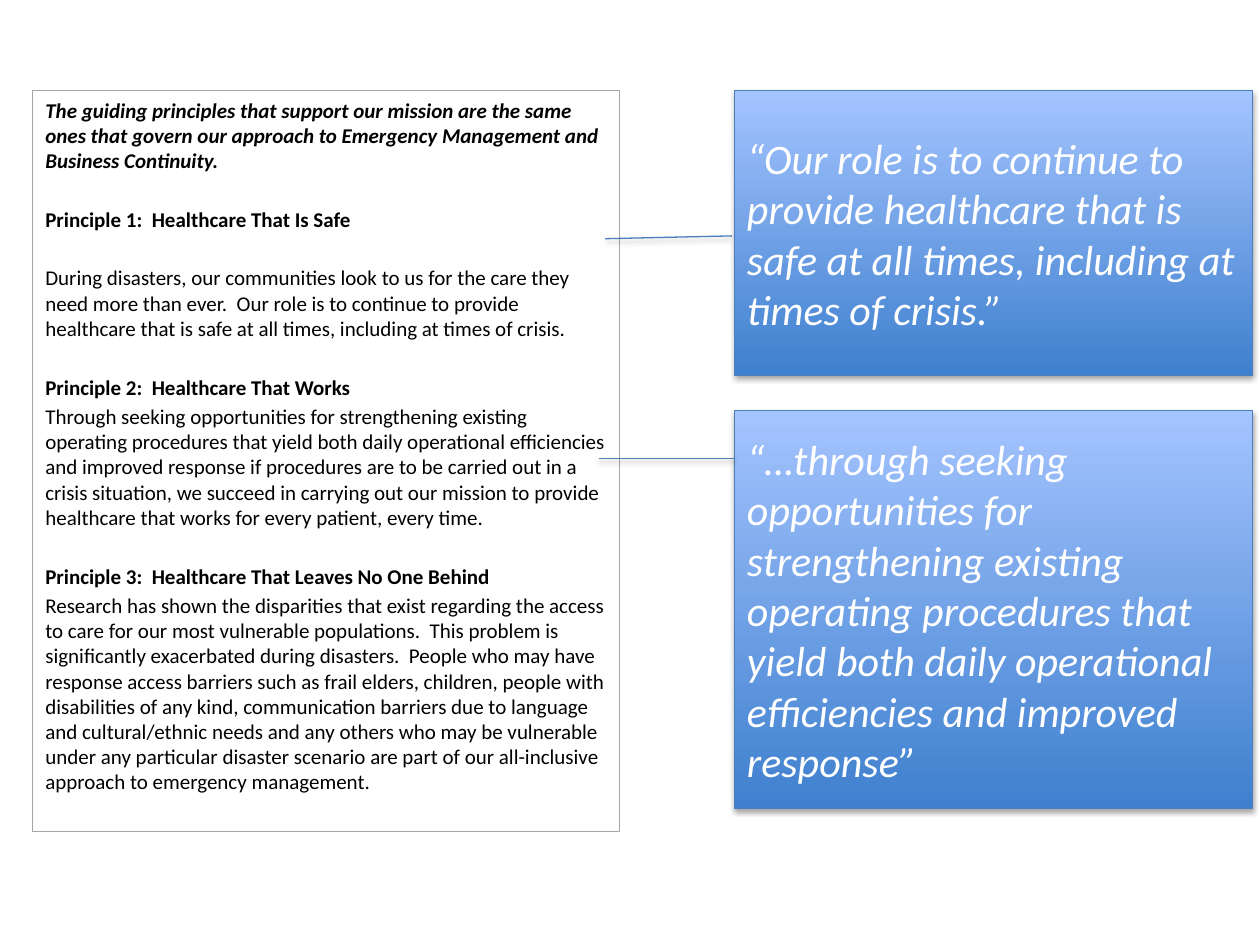
from dataclasses import dataclass

from lxml import etree
from pptx import Presentation
from pptx.dml.color import RGBColor
from pptx.enum.shapes import MSO_CONNECTOR, MSO_SHAPE
from pptx.enum.text import MSO_ANCHOR, MSO_AUTO_SIZE, PP_ALIGN
from pptx.oxml import parse_xml
from pptx.oxml.ns import nsdecls, qn
from pptx.util import Inches, Pt

RECT = MSO_SHAPE.RECTANGLE
CALLOUT = MSO_SHAPE.LINE_CALLOUT_1
STRAIGHT = MSO_CONNECTOR.STRAIGHT
MIDDLE, TOP = MSO_ANCHOR.MIDDLE, MSO_ANCHOR.TOP
LEFT = PP_ALIGN.LEFT
NO_AUTOFIT = MSO_AUTO_SIZE.NONE


@dataclass(frozen=True)
class Theme:
    font: str = "Calibri"
    body_size: float = 12
    quote_size: float = 24
    line_width: float = 0.75
    para_gap: float = 2.4
    section_gap: float = 19.2
    text: str = "000000"
    quote_text: str = "FFFFFF"
    body_line: str = "A6A6A6"
    quote_line: str = "4B7EBC"
    connector: str = "4F81BD"
    grad_bottom: str = "3F80CE"
    grad_top: str = "A4C4FF"


THEME = Theme()

INTRO = ("The guiding principles that support our mission are the same ones that govern "
         "our approach to Emergency Management and Business Continuity.")
# heading, text, gap between them
PRINCIPLES = [
    ("Principle 1:  Healthcare That Is Safe",
     "During disasters, our communities look to us for the care they need more than ever.  "
     "Our role is to continue to provide healthcare that is safe at all times, including at "
     "times of crisis.", THEME.section_gap),
    ("Principle 2:  Healthcare That Works",
     "Through seeking opportunities for strengthening existing operating procedures that "
     "yield both daily operational efficiencies and improved response if procedures are to "
     "be carried out in a crisis situation, we succeed in carrying out our mission to "
     "provide healthcare that works for every patient, every time.", THEME.para_gap),
    ("Principle 3:  Healthcare That Leaves No One Behind",
     "Research has shown the disparities that exist regarding the access to care for our "
     "most vulnerable populations.  This problem is significantly exacerbated during "
     "disasters.  People who may have response access barriers such as frail elders, "
     "children, people with disabilities of any kind, communication barriers due to language "
     "and cultural/ethnic needs and any others who may be vulnerable under any particular "
     "disaster scenario are part of our all-inclusive approach to emergency management.",
     THEME.para_gap),
]
QUOTE_SAFE = ("“Our role is to continue to provide healthcare that is safe at all times, "
              "including at times of crisis.”")
QUOTE_WORKS = ("“…through seeking opportunities for strengthening existing operating "
               "procedures that yield both daily operational efficiencies and improved "
               "response”")


def rgb(value):
    return RGBColor.from_string(value)


def set_line(sp, color):
    sp.line.color.rgb = rgb(color)
    sp.line.width = Pt(THEME.line_width)


def set_shadow(sp, alpha, dist):
    """Replace the inherited shadow with a soft one falling straight down."""
    sp_pr = sp._element.spPr
    for old in sp_pr.findall(qn("a:effectLst")):
        sp_pr.remove(old)
    sp_pr.append(parse_xml(
        f'<a:effectLst {nsdecls("a")}><a:outerShdw blurRad="{Pt(3.1)}" dist="{Pt(dist)}" '
        f'dir="5400000" rotWithShape="0"><a:srgbClr val="000000">'
        f'<a:alpha val="{alpha * 1000}"/></a:srgbClr></a:outerShdw></a:effectLst>'))


def add_run(p, text, size, color, bold=False, italic=False):
    r = p.add_run()
    r.text = text
    r.font.name = THEME.font
    r.font.size = Pt(size)
    r.font.color.rgb = rgb(color)
    r.font.bold = bold
    r.font.italic = italic


def add_body_paragraph(tf, text, gap, **style):
    p = tf.add_paragraph() if tf.paragraphs[0].runs else tf.paragraphs[0]
    p.space_before = Pt(gap)
    p_pr = p._p.get_or_add_pPr()
    p_pr.set("marL", "0")
    p_pr.set("indent", "0")
    etree.SubElement(p_pr, qn("a:buNone"))
    add_run(p, text, THEME.body_size, THEME.text, **style)


def fill_principles(sp):
    sp.left, sp.top, sp.width, sp.height = map(Inches, (0.26, 0.72, 4.66, 5.88))
    set_line(sp, THEME.body_line)
    tf = sp.text_frame
    tf.word_wrap = True
    tf.auto_size = NO_AUTOFIT
    tf.vertical_anchor = TOP
    add_body_paragraph(tf, INTRO, 0, bold=True, italic=True)
    for heading, text, gap in PRINCIPLES:
        add_body_paragraph(tf, heading, THEME.section_gap, bold=True)
        add_body_paragraph(tf, text, gap)


def add_quote(slide, kind, top, height, text):
    sp = slide.shapes.add_shape(kind, Inches(5.83), Inches(top), Inches(4.11), Inches(height))
    sp.fill.gradient()
    sp.fill.gradient_angle = 90
    for stop, color in zip(sp.fill.gradient_stops, (THEME.grad_bottom, THEME.grad_top)):
        stop.color.rgb = rgb(color)
    for stop, position in zip(sp.fill.gradient_stops, (0, 1)):
        stop.position = position
    set_line(sp, THEME.quote_line)
    set_shadow(sp, alpha=35, dist=1.8)
    tf = sp.text_frame
    tf.word_wrap = True
    tf.vertical_anchor = MIDDLE
    p = tf.paragraphs[0]
    p.alignment = LEFT
    add_run(p, text, THEME.quote_size, THEME.quote_text, italic=True)
    return sp


def add_link(slide, x1, x2, y):
    line = slide.shapes.add_connector(STRAIGHT, Inches(x1), Inches(y), Inches(x2), Inches(y))
    set_line(line, THEME.connector)
    set_shadow(line, alpha=38, dist=1.6)


def main():
    prs = Presentation()
    prs.slide_width, prs.slide_height = Inches(10), Inches(7.5)
    slide = prs.slides.add_slide(prs.slide_layouts[1])
    title = slide.shapes.title
    title._element.getparent().remove(title._element)

    fill_principles(slide.placeholders[1])
    callout = add_quote(slide, CALLOUT, 0.72, 2.26, QUOTE_SAFE)
    for i, value in enumerate((0.51, -0.005, 0.52, -0.25)):
        callout.adjustments[i] = value
    add_quote(slide, RECT, 3.26, 3.16, QUOTE_WORKS)
    add_link(slide, 4.75, 5.83, 3.64)
    prs.save("out.pptx")


if __name__ == "__main__":
    main()
